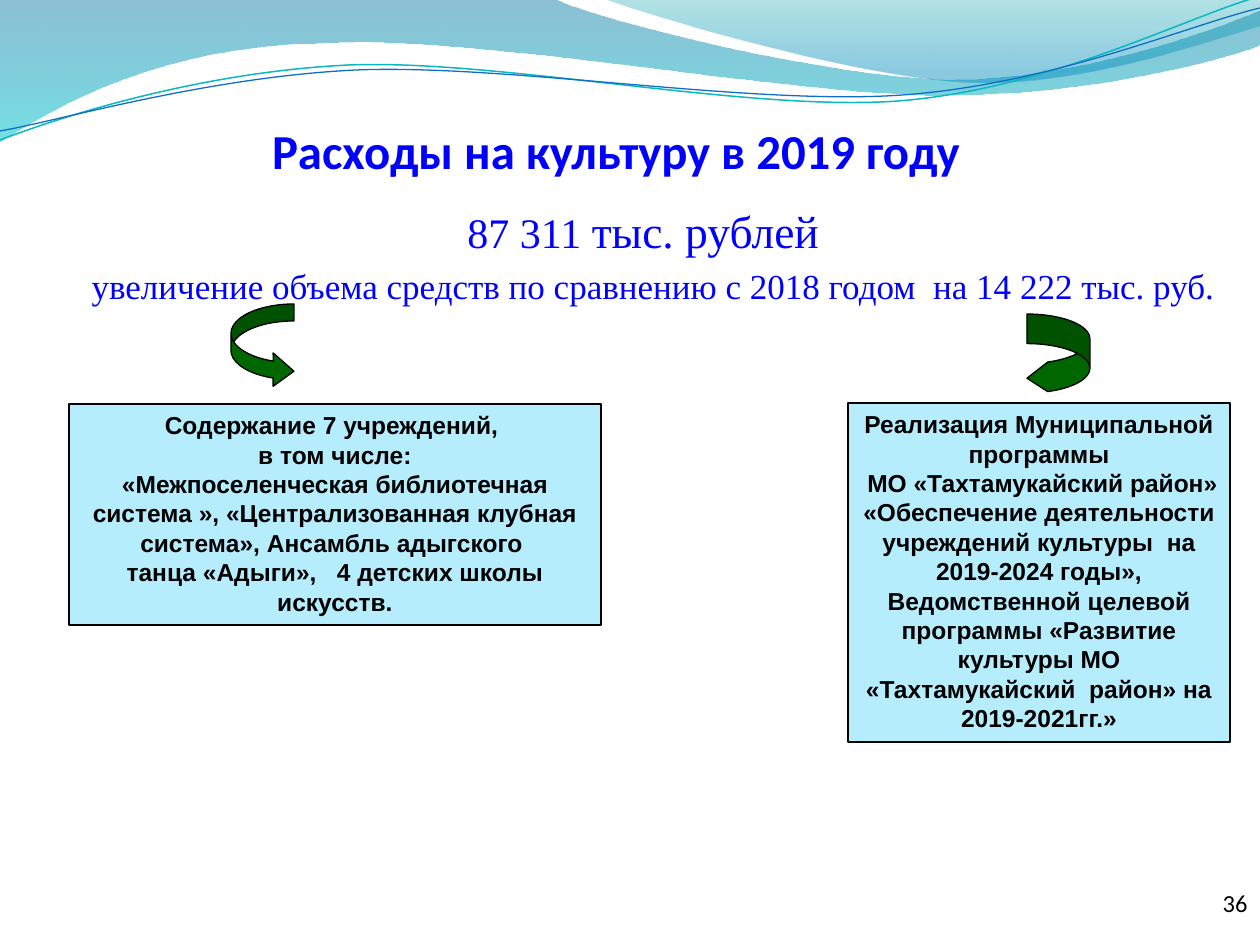
from lxml.etree import SubElement
from pptx import Presentation
from pptx.dml.color import RGBColor
from pptx.enum.shapes import MSO_SHAPE
from pptx.enum.text import MSO_ANCHOR, PP_ALIGN
from pptx.oxml.ns import qn
from pptx.util import Pt

SCALE = 914400 / 126
BLUE, GREEN, PALE, BLACK = "0000FF", "006600", "B5EDFD", "000000"


def px(n):
    return round(n * SCALE)


def rgb(value):
    return RGBColor.from_string(value)


def box(*lengths):
    return [px(n) for n in lengths]


def add_outline(s, start, parts, close):
    points = [point for part in parts for point in part]
    builder = s.shapes.build_freeform(*box(*start), scale=1.0)
    builder.add_line_segments([box(*point) for point in points], close=close)
    sp = builder.convert_to_shape()
    sp.shadow.inherit = False
    segments = iter(list(sp.element.spPr.iter(qn("a:lnTo"))))
    for part in parts:
        first = next(segments)
        if len(part) == 3:
            first.tag = qn("a:cubicBezTo")
            for extra in (next(segments), next(segments)):
                first.append(extra[0])
                extra.getparent().remove(extra)
    return sp


def add_wave(s, start, parts, stops):
    sp = add_outline(s, start, parts, True)
    sp.line.fill.background()
    sp.fill.gradient()
    sp.fill.gradient_angle = 270
    for stop, (position, color, _) in zip(sp.fill.gradient_stops, stops):
        stop.position = position
        stop.color.rgb = rgb(color)
    for clr, (_, _, opacity) in zip(sp.element.spPr.iter(qn("a:srgbClr")), stops):
        SubElement(clr, qn("a:alpha"), val=str(opacity * 1000))


def add_curve(s, start, parts, color, width):
    sp = add_outline(s, start, parts, False)
    sp.fill.background()
    sp.line.color.rgb = rgb(color)
    sp.line.width = Pt(width)


def add_shape(s, kind, lengths, fill):
    sp = s.shapes.add_shape(kind, *box(*lengths))
    sp.shadow.inherit = False
    sp.fill.solid()
    sp.fill.fore_color.rgb = rgb(fill)
    sp.line.color.rgb = rgb(BLACK)
    sp.line.width = Pt(0.75)
    return sp


def add_arrow(s, kind, lengths, adjustments):
    sp = add_shape(s, kind, lengths, GREEN)
    for i, value in enumerate(adjustments):
        sp.adjustments[i] = value


def set_font(font, name, size, color, bold=False):
    font.name, font.size, font.bold = name, Pt(size), bold
    font.color.rgb = rgb(color)


def add_panel(s, lengths, lines):
    tf = add_shape(s, MSO_SHAPE.RECTANGLE, lengths, PALE).text_frame
    tf.word_wrap = True
    tf.vertical_anchor = MSO_ANCHOR.TOP
    tf.text = "\n".join(lines)
    for p in tf.paragraphs:
        p.alignment = PP_ALIGN.CENTER
        set_font(p.font, "Arial", 14, BLACK, True)


def set_title(s, text):
    title = s.shapes.title
    title.left, title.top, title.width, title.height = box(44, 66, 1144, 113)
    tf = title.text_frame
    tf.text = text
    tf.vertical_anchor = MSO_ANCHOR.BOTTOM
    tf.margin_left = tf.margin_right = tf.margin_bottom = 0
    p = tf.paragraphs[0]
    p.alignment = PP_ALIGN.CENTER
    set_font(p.font, "Calibri", 27.9, BLUE, True)


def add_summary(s, lengths, lines):
    tf = s.shapes.add_textbox(*box(*lengths)).text_frame
    tf.word_wrap = True
    for i, (gap, runs) in enumerate(lines):
        p = tf.add_paragraph() if i else tf.paragraphs[0]
        p.alignment = PP_ALIGN.CENTER
        p.space_before = Pt(gap)
        for text, size in runs:
            r = p.add_run()
            r.text = text
            set_font(r.font, "Times New Roman", size, BLUE)


def add_page_number(s, text):
    tf = s.shapes.add_textbox(*box(998, 871, 262, 63)).text_frame
    tf.word_wrap = True
    tf.vertical_anchor = MSO_ANCHOR.MIDDLE
    p = tf.paragraphs[0]
    p.text = text
    p.alignment = PP_ALIGN.RIGHT
    set_font(p.font, "Calibri", 14, BLACK)


def add_backdrop(s):
    add_wave(s, (0, 0), [
        [(554, -1)],
        [(600, 21), (837, 79), (955, 79)],
        [(1075, 79), (1207, 33), (1260, 11)],
        [(1261, 45)],
        [(1239, 55), (1096, 96), (940, 95)],
        [(784, 95), (481, 35), (324, 43)],
        [(163, 45), (58, 105), (-1, 142)],
    ], [(0, "0074A1", 45), (1, "00C6CF", 55)])
    add_wave(s, (604, -1), [
        [(641, 14), (859, 78), (969, 82)],
        [(1079, 87), (1211, 40), (1260, 26)],
        [(1260, 0)],
    ], [(0, "00A1A9", 30), (0.8, "008BBF", 45)])
    add_curve(s, (0, 140), [
        [(60, 117), (199, 72), (349, 65)],
        [(499, 59), (747, 112), (898, 101)],
        [(1049, 89), (1182, 19), (1257, -3)],
    ], "0AB8BF", 0.85)
    add_curve(s, (0, 131), [
        [(59, 121), (207, 77), (357, 70)],
        [(508, 64), (752, 106), (903, 95)],
        [(1053, 84), (1186, 26), (1260, 8)],
    ], "0F6FC6", 0.75)


def main():
    prs = Presentation()
    prs.slide_width, prs.slide_height = box(1260, 945)
    s = prs.slides.add_slide(prs.slide_layouts[5])
    add_backdrop(s)
    add_page_number(s, "36")
    set_title(s, "Расходы на культуру в 2019 году")
    add_summary(s, (63, 197, 1172, 702), [
        (5, [("87 311 ", 24), ("тыс. рублей ", 26)]),
        (4, [(" увеличение объема средств по сравнению с 2018 годом  на 14 222 тыс. руб.", 20)]),
    ])
    add_arrow(s, MSO_SHAPE.CURVED_RIGHT_ARROW, (231, 304, 63, 84), (0.27, 0.53, 0.33))
    add_arrow(s, MSO_SHAPE.CURVED_LEFT_ARROW, (1027, 314, 63, 79), (0.47, 0.47, 0.33))
    add_panel(s, (69, 404, 532, 221), [
        "Содержание 7 учреждений, ",
        "в том числе:",
        "«Межпоселенческая библиотечная система », «Централизованная клубная "
        "система», Ансамбль адыгского ",
        "танца «Адыги»,   4 детских школы искусств.",
    ])
    add_panel(s, (848, 403, 382, 339), [
        "Реализация Муниципальной программы",
        " МО «Тахтамукайский район» «Обеспечение деятельности учреждений культуры  "
        "на 2019-2024 годы», Ведомственной целевой программы «Развитие культуры МО "
        "«Тахтамукайский  район» на 2019-2021гг.»",
    ])
    prs.save("out.pptx")


if __name__ == "__main__":
    main()
